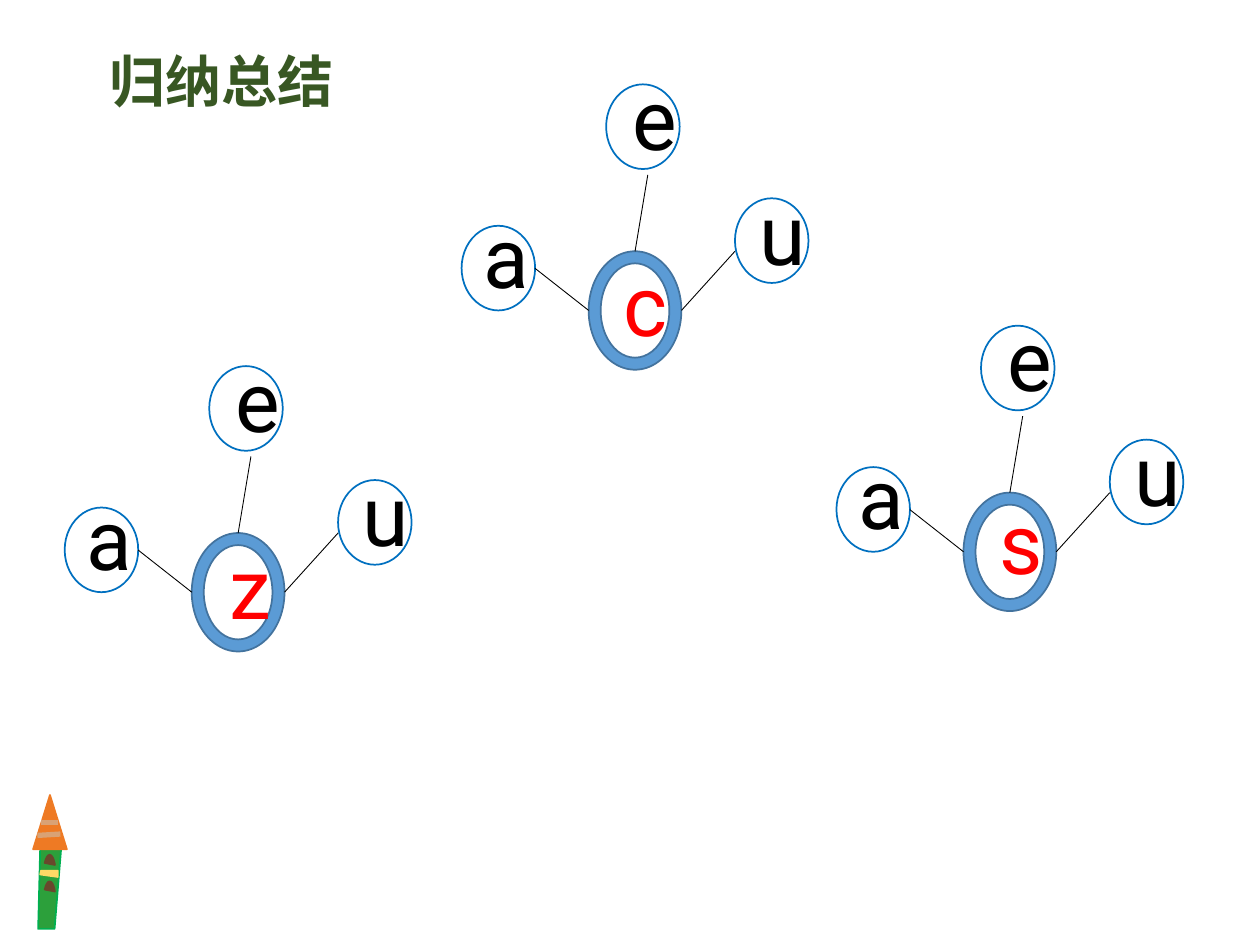
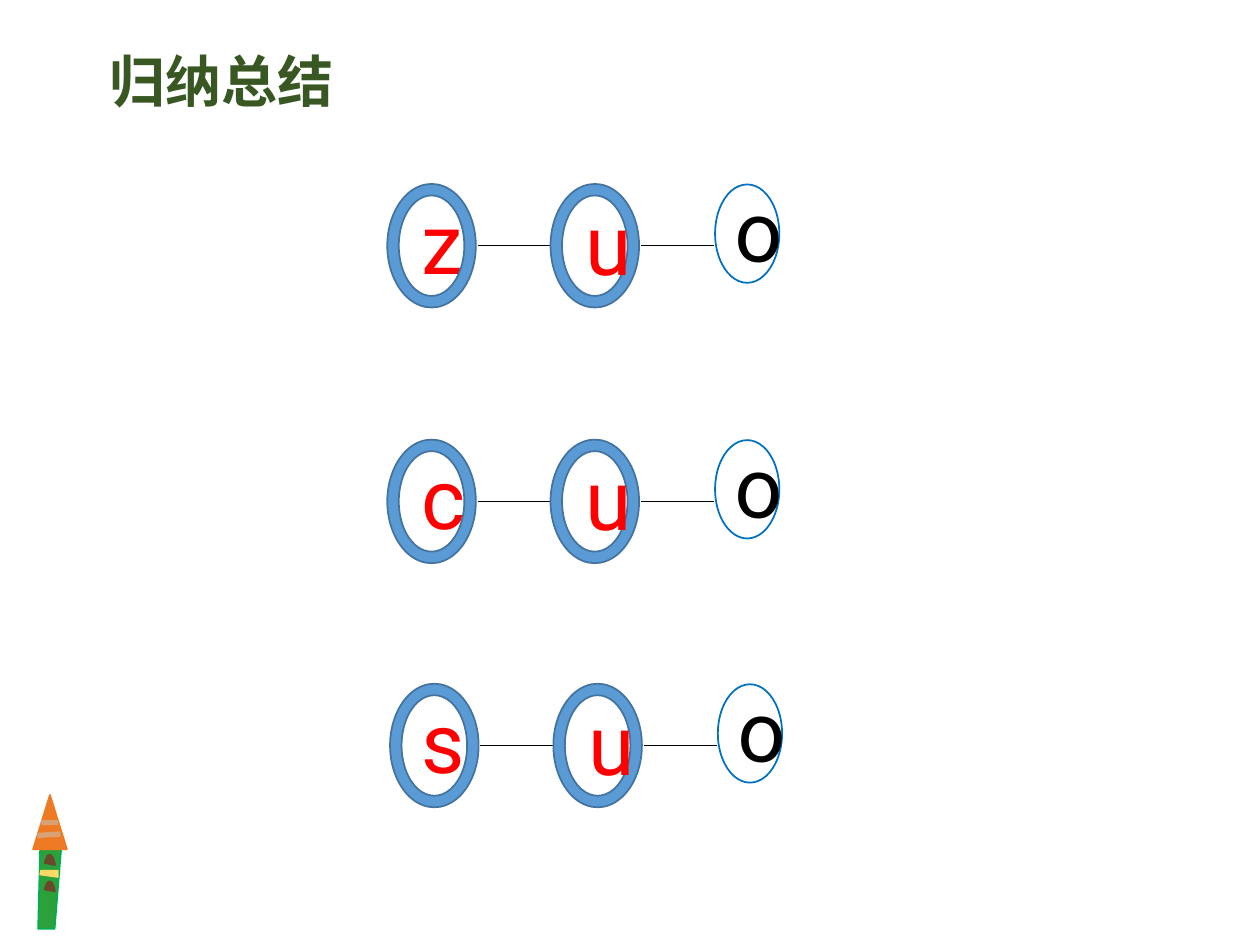
from lxml import etree
from pptx import Presentation
from pptx.dml.color import RGBColor
from pptx.enum.shapes import MSO_CONNECTOR, MSO_SHAPE
from pptx.enum.text import MSO_ANCHOR, MSO_AUTO_SIZE, PP_ALIGN
from pptx.oxml.ns import qn
from pptx.util import Pt

DONUT, CIRCLE = MSO_SHAPE.DONUT, MSO_SHAPE.FLOWCHART_CONNECTOR
TRIANGLE, CHORD = MSO_SHAPE.ISOSCELES_TRIANGLE, MSO_SHAPE.CHORD
STRAIGHT = MSO_CONNECTOR.STRAIGHT
LEFT, CENTER = PP_ALIGN.LEFT, PP_ALIGN.CENTER
TOP, NO_FIT = MSO_ANCHOR.TOP, MSO_AUTO_SIZE.NONE
TITLE_ONLY = 5

BLACK, RED, WHITE = "000000", "FF0000", "FFFFFF"
RING, RING_EDGE, CIRCLE_EDGE = "5B9BD5", "43739E", "0070C0"
TITLE_GREEN, BROWN, ORANGE, TAN = "385723", "69482C", "EE7A24", "D9A275"
TITLE_FONT, LETTER_FONT = "Noto Sans CJK SC", "Roboto"
LETTER_HEIGHT = 65.5


def color(value):
    return RGBColor.from_string(value)


def write(shape, text, size=48, font=LETTER_FONT, fill=BLACK, bold=False,
          align=LEFT, wrap=True):
    frame = shape.text_frame
    frame.word_wrap = wrap
    frame.auto_size = NO_FIT
    frame.vertical_anchor = TOP
    para = frame.paragraphs[0]
    para.alignment = align
    span = para.add_run()
    span.text = text
    span.font.size = Pt(size)
    span.font.name = font
    span.font.bold = bold
    span.font.color.rgb = color(fill)
    etree.SubElement(span.font._element, qn("a:ea"), typeface=font)


class Board:
    """Holds the deck, its style and the current page."""

    def __init__(self):
        self.deck = Presentation()
        self.deck.slide_width, self.deck.slide_height = Pt(720), Pt(540)
        self.page = None

    def new_page(self, title):
        self.page = self.deck.slides.add_slide(self.deck.slide_layouts[TITLE_ONLY])
        self.pencil()
        box = self.page.shapes.title
        box.left, box.top, box.width, box.height = Pt(54.7), Pt(23), Pt(144), Pt(46)
        write(box, title, size=32, font=TITLE_FONT, fill=TITLE_GREEN,
              bold=True, align=CENTER, wrap=False)

    def paint(self, shape, fill, edge):
        shape.shadow.inherit = False
        shape.fill.solid()
        shape.fill.fore_color.rgb = color(fill)
        shape.line.color.rgb = color(edge)
        shape.line.width = Pt(1)

    def shape(self, kind, left, top, width, height, fill, edge, adjust=(), turn=0):
        shape = self.page.shapes.add_shape(kind, Pt(left), Pt(top), Pt(width), Pt(height))
        for index, value in enumerate(adjust):
            shape.adjustments[index] = value
        shape.rotation = turn
        self.paint(shape, fill, edge)

    def outline(self, points, fill, edge):
        start, *rest = [(Pt(x), Pt(y)) for x, y in points]
        builder = self.page.shapes.build_freeform(*start)
        builder.add_line_segments(rest, close=True)
        self.paint(builder.convert_to_shape(), fill, edge)

    def line(self, x1, y1, x2, y2, edge=BLACK, width=0.5):
        line = self.page.shapes.add_connector(STRAIGHT, Pt(x1), Pt(y1), Pt(x2), Pt(y2))
        line.line.color.rgb = color(edge)
        line.line.width = Pt(width)
        etree.SubElement(line._element.spPr, qn("a:effectLst"))

    def letter(self, text, left, top, width, fill=BLACK, turn=0):
        box = self.page.shapes.add_textbox(Pt(left), Pt(top), Pt(width), Pt(LETTER_HEIGHT))
        box.rotation = turn
        write(box, text, fill=fill)

    def ring(self, left, top, width, height):
        self.shape(DONUT, left, top, width, height, RING, RING_EDGE, adjust=[0.13])

    def circle(self, left, top, width, height):
        self.shape(CIRCLE, left, top, width, height, WHITE, CIRCLE_EDGE)

    def pencil(self):
        self.outline([(23.2, 476), (35.1, 483), (31.2, 530.8), (21.8, 530.8)],
                     "2CA03B", "00B050")
        self.shape(TRIANGLE, 18.9, 454.3, 19.3, 31, ORANGE, ORANGE)
        for top in (494.6, 509.8):
            self.shape(CHORD, 19, top, 18.7, 6.5, BROWN, BROWN,
                       adjust=[89.452, 132.133], turn=90)
        self.outline([(23.5, 497.5), (33.1, 497.5), (33.1, 501.1), (23, 499.7)],
                     "FFD966", "FFD966")
        self.line(23.5, 470, 33.3, 470, TAN, 3)
        self.line(21.4, 477.4, 34.5, 476.6, TAN, 3)

    def flower(self, consonant, left, top, letter_x, letter_y):
        self.ring(left, top, 53, 67.7)
        # Vowel, circle corner, letter corner and stem, from the ring's corner
        petals = [
            ("a", (-72.6, -14.6), (-67.3, -30.2), (-30.7, 9.7, 0, 33.8)),
            ("e", (10, -95.4), (18, -109.2), (33.8, -43.7, 26.5, 0)),
            ("u", (83.6, -30.3), (90.7, -43.6), (53, 33.8, 83.6, 0)),
        ]
        for vowel, (x, y), (text_x, text_y), (x1, y1, x2, y2) in petals:
            self.circle(left + x, top + y, 42, 48.4)
            self.line(left + x1, top + y1, left + x2, top + y2)
            self.letter(vowel, left + text_x, top + text_y, 32.4)
        self.letter(consonant, left + letter_x, top + letter_y, 35, RED)

    def chain(self, consonant, left, middle):
        ring_top = middle - 35.3
        self.letter(consonant, 233.5, ring_top, 29, RED)
        for step in (0, 93.3):
            self.ring(left + step, ring_top, 50.6, 70.6)
            self.line(left + step + 51.6, middle, left + step + 93.3, middle)
        self.letter("u", left + 106.3, middle - 34.6, 50.4, RED)
        self.circle(left + 187.3, middle - 35, 36.7, 56.2)
        self.letter("o", left + 192, middle - 41.8, 45.4, turn=3.8)


def main():
    board = Board()
    title = "归纳总结"

    # Consonants with three vowels around each
    board.new_page(title)
    board.flower("z", 109.6, 304.6, 14.4, -2.4)
    board.flower("c", 336.4, 143.6, 13, -2.7)
    board.flower("s", 550.6, 281.5, 13.7, -5)

    # Consonant, medial and final in a row
    board.new_page(title)
    for consonant, left, middle in [("z", 221.3, 140.4), ("c", 221.3, 286.5),
                                    ("s", 222.9, 426)]:
        board.chain(consonant, left, middle)

    board.deck.save("out.pptx")


if __name__ == "__main__":
    main()
